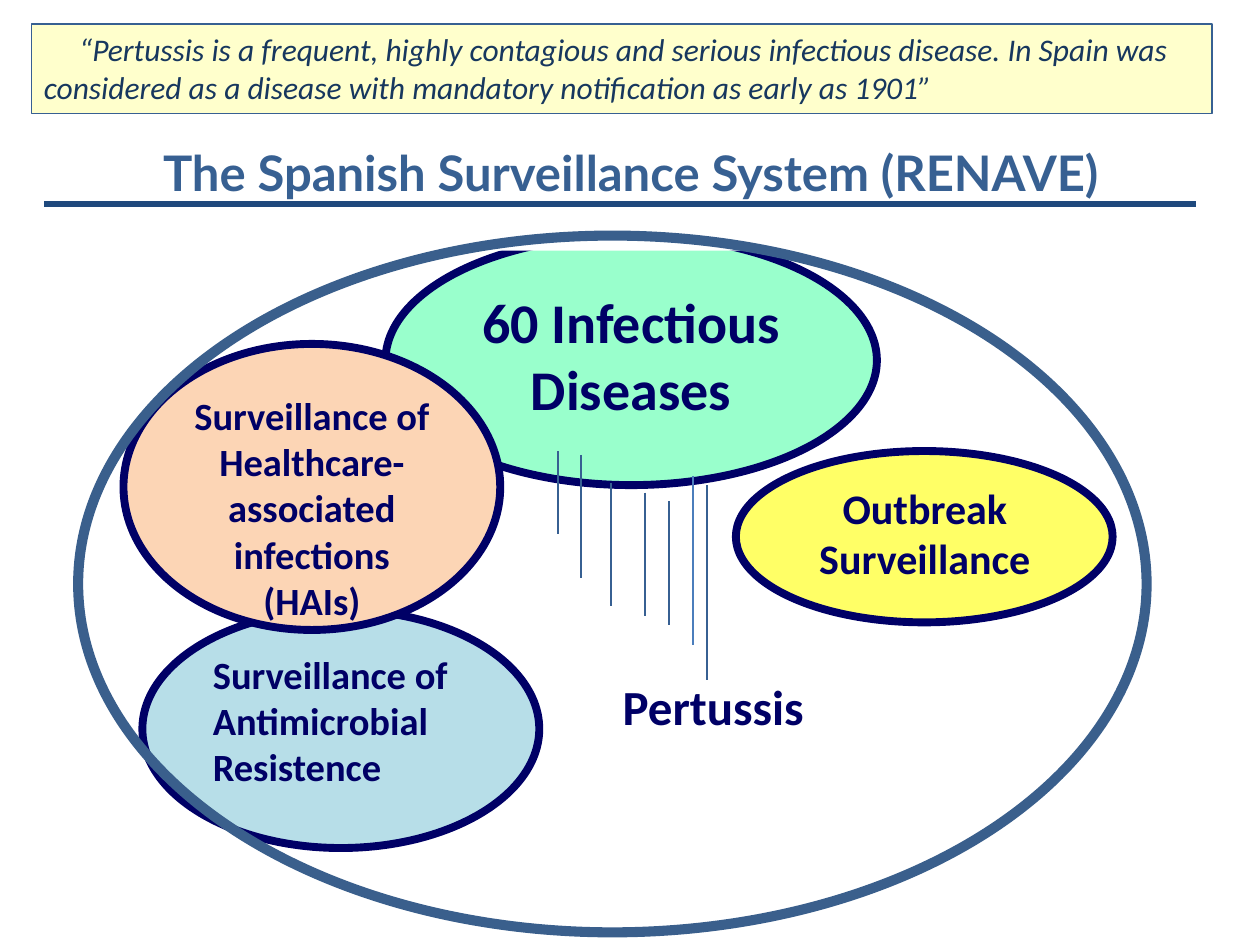
from pptx import Presentation
from pptx.dml.color import RGBColor
from pptx.enum.shapes import MSO_CONNECTOR, MSO_SHAPE
from pptx.enum.text import MSO_ANCHOR, PP_ALIGN
from pptx.oxml.ns import qn
from pptx.util import Inches, Pt
from lxml.etree import SubElement

NAVY = RGBColor(0x00, 0x00, 0x66)
BLUE = RGBColor(0x37, 0x60, 0x92)
LIGHT_BLUE = RGBColor(0x4B, 0x7E, 0xBC)
RULE_BLUE = RGBColor(0x1F, 0x49, 0x7D)
RING_BLUE = RGBColor(0x3A, 0x5F, 0x8C)
QUOTE_BLUE = RGBColor(0x17, 0x37, 0x5E)
WHITE = RGBColor(0xFF, 0xFF, 0xFF)
CREAM = RGBColor(0xFF, 0xFF, 0xCC)
SKY = RGBColor(0xB7, 0xDE, 0xE8)
YELLOW = RGBColor(0xFF, 0xFF, 0x66)
MINT = RGBColor(0x99, 0xFF, 0xCC)
PEACH = RGBColor(0xFC, 0xD5, 0xB5)

PERTUSSIS_LINES = [
    (4.43, 3.58, 4.24, BLUE, 1.25),
    (5.5, 3.78, 5.12, LIGHT_BLUE, 0.75),
    (4.61, 3.61, 4.59, BLUE, 1.25),
    (5.61, 3.85, 5.4, BLUE, 1.25),
    (4.85, 3.83, 4.81, BLUE, 1.25),
    (5.12, 3.91, 4.89, BLUE, 1.25),
    (5.31, 3.98, 4.96, BLUE, 1.25),
]


def write_text(shape, text, size, color=NAVY, font="Calibri", bold=True,
               italic=False, align=PP_ALIGN.CENTER, anchor=MSO_ANCHOR.TOP, wrap=True):
    """Fill a shape with evenly formatted text."""
    frame = shape.text_frame
    frame.text = text
    frame.word_wrap = wrap
    frame.vertical_anchor = anchor
    for paragraph in frame.paragraphs:
        paragraph.alignment = align
        for run in paragraph.runs:
            run.font.name = font
            run.font.size = Pt(size)
            run.font.bold = bold
            run.font.italic = italic
            run.font.color.rgb = color
    return frame


def add_outlined(slide, kind, box, fill, line, width):
    """Add a preset shape with an outline and an optional fill."""
    shape = slide.shapes.add_shape(kind, *map(Inches, box))
    shape.shadow.inherit = False
    if fill is None:
        shape.fill.background()
    else:
        shape.fill.solid()
        shape.fill.fore_color.rgb = fill
    shape.line.color.rgb = line
    shape.line.width = Pt(width)
    return shape


def add_oval(slide, box, fill):
    """Add a filled oval for one part of the surveillance system."""
    return add_outlined(slide, MSO_SHAPE.OVAL, box, fill, NAVY, 4.5)


def add_label(slide, box, text, size, wrap=True):
    """Add a free-standing centred label."""
    label = slide.shapes.add_textbox(*map(Inches, box))
    write_text(label, text, size, wrap=wrap)


def add_line(slide, start, end, color, width):
    """Add a straight line without shadow."""
    line = slide.shapes.add_connector(
        MSO_CONNECTOR.STRAIGHT, *map(Inches, (*start, *end)))
    line.line.color.rgb = color
    line.line.width = Pt(width)
    SubElement(line.element.spPr, qn("a:effectLst"))


def place_title(slide):
    """Format the title and bring it in front of the shapes drawn so far."""
    title = slide.shapes.title
    title.left, title.top, title.width, title.height = map(
        Inches, (0.69, 0.81, 8.63, 1.18))
    title.fill.solid()
    title.fill.fore_color.rgb = WHITE
    frame = write_text(title, "The Spanish Surveillance System (RENAVE)", 28,
                       BLUE, "Lato", anchor=MSO_ANCHOR.MIDDLE)
    frame.paragraphs[0].line_spacing = Pt(28)
    slide.shapes[-1].element.addnext(title.element)


def add_ovals(slide):
    """Add the parts of the surveillance system with their labels."""
    resistance = add_oval(slide, (1.13, 4.84, 3.15, 1.89), SKY)
    write_text(resistance, "Surveillance of Antimicrobial Resistence", 22,
               align=PP_ALIGN.LEFT)

    add_oval(slide, (5.84, 3.58, 2.99, 1.36), YELLOW)

    diseases = add_oval(slide, (3.06, 1.87, 3.9, 1.98), MINT)
    frame = write_text(diseases, "60 Infectious\nDiseases", 32, wrap=False)
    frame.margin_top = Inches(0.12)

    add_label(slide, (4.3, 5.32, 2.72, 0.57), "Pertussis", 28)

    infections = add_oval(slide, (0.98, 2.73, 2.99, 2.27), PEACH)
    write_text(infections, "Surveillance of Healthcare-associated infections (HAIs)", 22)

    add_label(slide, (6.39, 3.78, 1.9, 0.91), "Outbreak\nSurveillance", 24, wrap=False)


def add_quote(slide):
    """Add the quotation banner with an indented first line."""
    banner = add_outlined(slide, MSO_SHAPE.RECTANGLE, (0.25, 0.19, 9.37, 0.71),
                          CREAM, BLUE, 0.75)
    frame = write_text(
        banner,
        "“Pertussis is a frequent, highly contagious and serious infectious disease. In Spain was\n"
        "considered as a disease with mandatory notification as early as 1901”",
        18, QUOTE_BLUE, bold=False, italic=True, align=PP_ALIGN.LEFT)
    properties = frame.paragraphs[0]._p.get_or_add_pPr()
    properties.set("indent", str(Inches(0.28)))


def main():
    """Build the slide and save it."""
    presentation = Presentation()
    presentation.slide_width = Inches(10)
    presentation.slide_height = Inches(7.5)
    slide = presentation.slides.add_slide(presentation.slide_layouts[5])
    add_ovals(slide)
    place_title(slide)
    add_outlined(slide, MSO_SHAPE.OVAL, (0.62, 1.87, 8.48, 5.53), None, RING_BLUE, 5.75)
    for x, top, bottom, color, width in PERTUSSIS_LINES:
        add_line(slide, (x, top), (x, bottom), color, width)
    add_line(slide, (0.35, 1.62), (9.49, 1.62), RULE_BLUE, 3.75)
    add_quote(slide)
    presentation.save("out.pptx")


if __name__ == "__main__":
    main()
